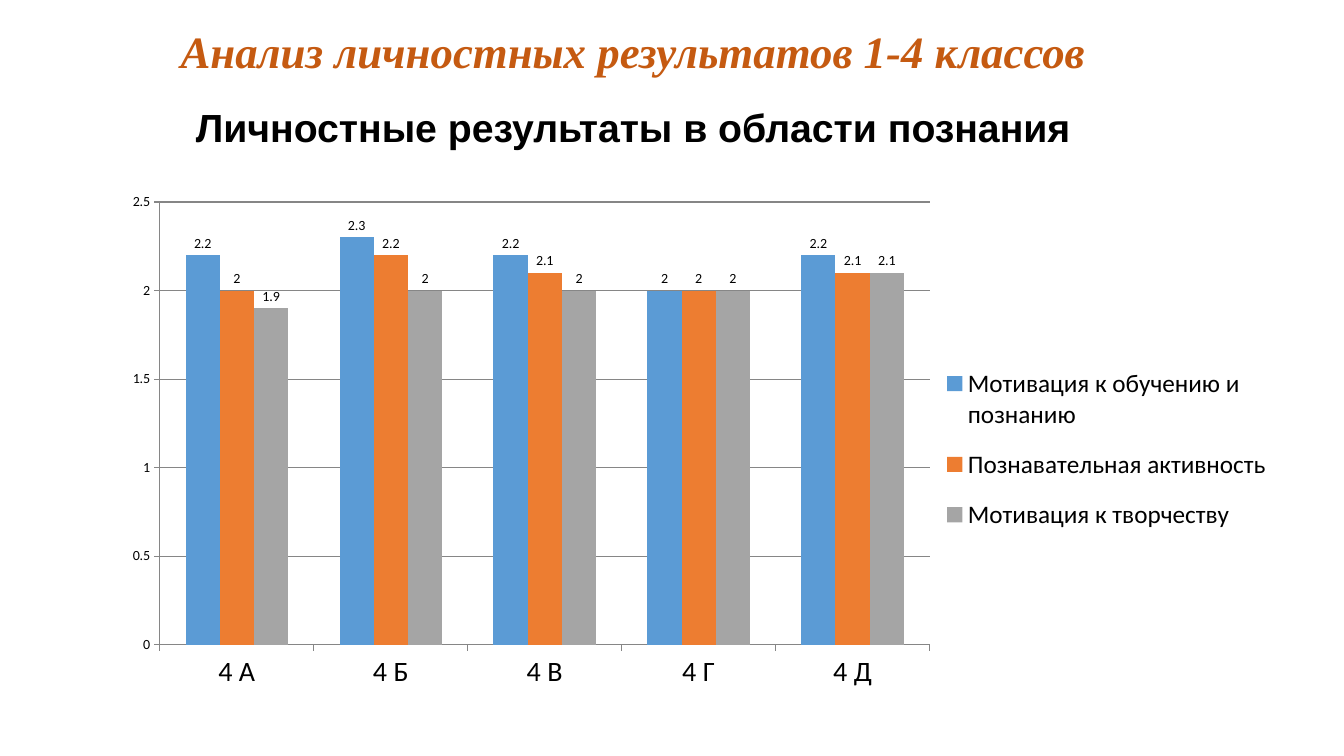
from lxml.etree import SubElement
from pptx import Presentation
from pptx.chart.data import CategoryChartData
from pptx.dml.color import RGBColor
from pptx.enum.chart import (XL_CHART_TYPE as ChartType, XL_LABEL_POSITION as LabelPosition,
                             XL_LEGEND_POSITION as LegendPosition, XL_TICK_MARK as TickMark)
from pptx.enum.text import MSO_ANCHOR as Anchor, PP_ALIGN as Align
from pptx.oxml.ns import qn
from pptx.util import Inches, Pt

COLORS = {"title": "C55A11", "text": "000000", "line": "868686"}
CLASSES = ["4 А", "4 Б", "4 В", "4 Г", "4 Д"]
RESULTS = [
    ("Мотивация к обучению и познанию", "5B9BD5", (2.2, 2.3, 2.2, 2, 2.2)),
    ("Познавательная активность", "ED7D31", (2, 2.2, 2.1, 2, 2.1)),
    ("Мотивация к творчеству", "A5A5A5", (1.9, 2, 2, 2, 2.1)),
]


def style_font(font, name, size, color):
    font.name = name
    font.size = Pt(size)
    font.color.rgb = RGBColor.from_string(color)


def add_heading(page, box, text, font_name, size, color, italic=False, wrap=True,
                anchor=Anchor.TOP):
    frame = page.shapes.add_textbox(*map(Inches, box)).text_frame
    frame.word_wrap = wrap
    frame.vertical_anchor = anchor
    frame.text = text
    para = frame.paragraphs[0]
    para.alignment = Align.CENTER
    span = para.runs[0]
    style_font(span.font, font_name, size, color)
    span.font.bold = True
    span.font.italic = italic


def set_layout(element, after, **settings):
    """Fix the place of a chart part, in fractions of the chart."""
    for old in element.findall(qn("c:layout")):
        element.remove(old)
    layout = SubElement(element, qn("c:layout"))
    manual = SubElement(layout, qn("c:manualLayout"))
    for key, value in settings.items():
        SubElement(manual, qn(f"c:{key}")).set("val", str(value))
    if after is None:
        element.insert(0, layout)
    else:
        after.addnext(layout)


def add_results_chart(page, box):
    data = CategoryChartData()
    data.categories = CLASSES
    for name, _, values in RESULTS:
        data.add_series(name, values)
    chart = page.shapes.add_chart(ChartType.COLUMN_CLUSTERED, *map(Inches, box), data).chart
    chart.has_title = False
    style_font(chart.font, "Calibri", 10, COLORS["text"])

    # Columns and their values
    plot = chart.plots[0]
    plot.gap_width = 150
    plot.overlap = 0
    plot.vary_by_categories = False
    for series, (_, color, _) in zip(plot.series, RESULTS):
        series.format.fill.solid()
        series.format.fill.fore_color.rgb = RGBColor.from_string(color)
        labels = series.data_labels
        labels.show_value = True
        labels.position = LabelPosition.OUTSIDE_END

    # Axes
    values_axis, class_axis = chart.value_axis, chart.category_axis
    values_axis.minimum_scale, values_axis.maximum_scale = 0, 2.5
    values_axis.major_unit = 0.5
    values_axis.has_major_gridlines = True
    for axis in (values_axis, class_axis):
        axis.major_tick_mark = TickMark.OUTSIDE
    for part in (values_axis, class_axis, values_axis.major_gridlines):
        part.format.line.color.rgb = RGBColor.from_string(COLORS["line"])
        part.format.line.width = Pt(0.75)
    style_font(class_axis.tick_labels.font, "Calibri", 20, COLORS["text"])

    # Legend
    chart.has_legend = True
    legend = chart.legend
    legend.position = LegendPosition.RIGHT
    legend.include_in_layout = False
    style_font(legend.font, "Calibri", 18, COLORS["text"])

    # Places of the plot and the legend
    plot_area = chart.element.find(f".//{qn('c:plotArea')}")
    set_layout(plot_area, None, layoutTarget="inner", xMode="edge", yMode="edge",
               x=0.043, y=0.036, w=0.648, h=0.858)
    legend_element = chart.element.find(f".//{qn('c:legend')}")
    set_layout(legend_element, legend_element.find(qn("c:legendPos")),
               xMode="edge", yMode="edge", x=0.69, y=0.32, w=0.3, h=0.39)


def build_results_slide(deck):
    page = deck.slides.add_slide(deck.slide_layouts[6])
    add_heading(page, (1.54, 0.19, 9.48, 0.64), "Анализ личностных результатов 1-4 классов",
                "Times New Roman", 32, COLORS["title"], italic=True, wrap=False)
    add_heading(page, (1.31, 0.97, 9.94, 0.57), "Личностные результаты в области познания",
                "Arial", 28, COLORS["text"], anchor=Anchor.MIDDLE)
    add_results_chart(page, (1.08, 1.82, 11.78, 5.12))


def main():
    deck = Presentation()
    deck.slide_width, deck.slide_height = Inches(13.33), Inches(7.5)
    build_results_slide(deck)
    deck.save("out.pptx")


if __name__ == "__main__":
    main()
